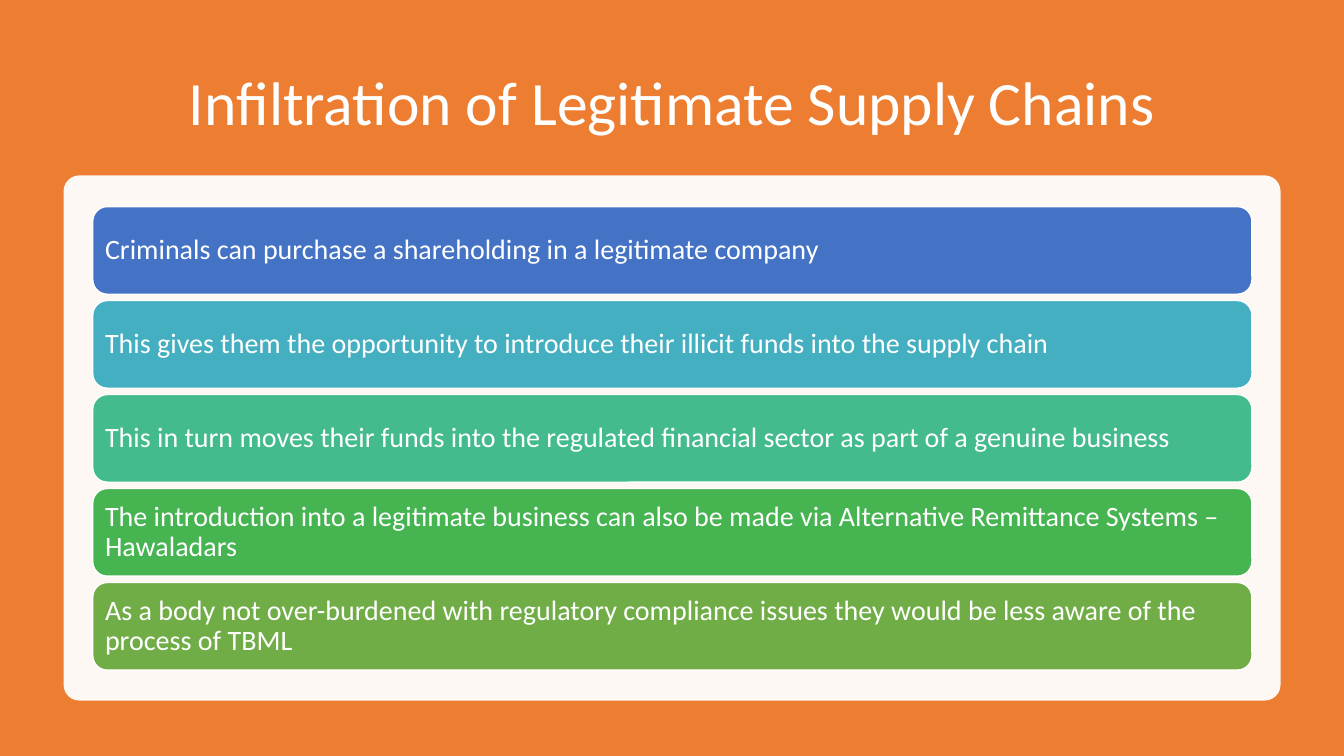
"""Build the slide on the infiltration of legitimate supply chains."""
from dataclasses import dataclass

from lxml import etree
from pptx import Presentation
from pptx.dml.color import RGBColor
from pptx.enum.shapes import MSO_SHAPE
from pptx.enum.text import MSO_ANCHOR, PP_ALIGN
from pptx.oxml.ns import qn
from pptx.util import Inches, Pt

RECTANGLE = MSO_SHAPE.RECTANGLE
ROUNDED = MSO_SHAPE.ROUNDED_RECTANGLE
MIDDLE = MSO_ANCHOR.MIDDLE
LEFT, CENTER = PP_ALIGN.LEFT, PP_ALIGN.CENTER

WHITE = RGBColor(0xFF, 0xFF, 0xFF)
ORANGE = RGBColor(0xED, 0x7D, 0x31)
BLUE = RGBColor(0x44, 0x72, 0xC4)
TEAL = RGBColor(0x43, 0xAF, 0xC0)
MINT = RGBColor(0x43, 0xBB, 0x8D)
GREEN = RGBColor(0x45, 0xB4, 0x51)
OLIVE = RGBColor(0x70, 0xAD, 0x47)

FONT = "Calibri"
SLIDE_WIDTH, SLIDE_HEIGHT = Inches(13.33), Inches(7.5)
BAR_TOP, BAR_PITCH, BAR_HEIGHT = 27.33, 12.43, 11.6
CONTENT_LEFT, CONTENT_WIDTH = 6.9, 86.25


@dataclass(frozen=True)
class Area:
    """A region in percent of the slide's width and height."""
    left: float
    top: float
    width: float
    height: float

    def lengths(self) -> tuple[int, int, int, int]:
        """Return the left, top, width and height as slide lengths."""
        return (int(SLIDE_WIDTH * self.left / 100), int(SLIDE_HEIGHT * self.top / 100),
                int(SLIDE_WIDTH * self.width / 100), int(SLIDE_HEIGHT * self.height / 100))


@dataclass(frozen=True)
class Step:
    """One statement and the colour of its bar."""
    statement: str
    color: RGBColor


BACKDROP = Area(0, 0, 100, 100)
TITLE = Area(CONTENT_LEFT, 6.67, CONTENT_WIDTH, 14.67)
PANEL = Area(4.73, 23.2, 90.55, 69.47)

STEPS = (
    Step("Criminals can purchase a shareholding in a legitimate company", BLUE),
    Step("This gives them the opportunity to introduce their illicit funds into the supply chain", TEAL),
    Step("This in turn moves their funds into the regulated financial sector as part of a genuine business", MINT),
    Step("The introduction into a legitimate business can also be made via "
         "Alternative Remittance Systems – Hawaladars", GREEN),
    Step("As a body not over-burdened with regulatory compliance issues they would be "
         "less aware of the process of TBML", OLIVE),
)


def add_block(slide, preset, area: Area, color: RGBColor):
    """Add a filled shape without outline or shadow."""
    block = slide.shapes.add_shape(preset, *area.lengths())
    block.shadow.inherit = False
    block.fill.solid()
    block.fill.fore_color.rgb = color
    block.line.fill.background()
    return block


def write(frame, wording: str, size: int, align) -> None:
    """Write one white, vertically centred paragraph."""
    frame.word_wrap = True
    frame.vertical_anchor = MIDDLE
    paragraph = frame.paragraphs[0]
    paragraph.alignment = align
    paragraph.line_spacing = 0.9
    run = paragraph.add_run()
    run.text = wording
    run.font.size = Pt(size)
    run.font.name = FONT
    run.font.color.rgb = WHITE


def add_panel(slide) -> None:
    """Add the slightly transparent panel behind the bars."""
    panel = add_block(slide, ROUNDED, PANEL, WHITE)
    panel.adjustments[0] = 0.03
    panel_color = panel.fill._xPr.find(qn("a:solidFill")).find(qn("a:srgbClr"))
    etree.SubElement(panel_color, qn("a:alpha")).set("val", "95000")


def add_step(slide, row: int, step: Step) -> None:
    """Add the bar of one statement in its row."""
    area = Area(CONTENT_LEFT, BAR_TOP + row * BAR_PITCH, CONTENT_WIDTH, BAR_HEIGHT)
    bar = add_block(slide, ROUNDED, area, step.color)
    bar.line.color.rgb = WHITE
    bar.line.width = Pt(1)
    frame = bar.text_frame
    frame.margin_left = frame.margin_right = Inches(0.08)
    frame.margin_top = frame.margin_bottom = Inches(0.08)
    write(frame, step.statement, 20, LEFT)


def main() -> None:
    """Build and save the presentation."""
    deck = Presentation()
    deck.slide_width, deck.slide_height = SLIDE_WIDTH, SLIDE_HEIGHT
    slide = deck.slides.add_slide(deck.slide_layouts[6])
    add_block(slide, RECTANGLE, BACKDROP, ORANGE)
    title = slide.shapes.add_textbox(*TITLE.lengths())
    write(title.text_frame, "Infiltration of Legitimate Supply Chains", 44, CENTER)
    add_panel(slide)
    for row, step in enumerate(STEPS):
        add_step(slide, row, step)
    deck.save("out.pptx")


if __name__ == "__main__":
    main()
